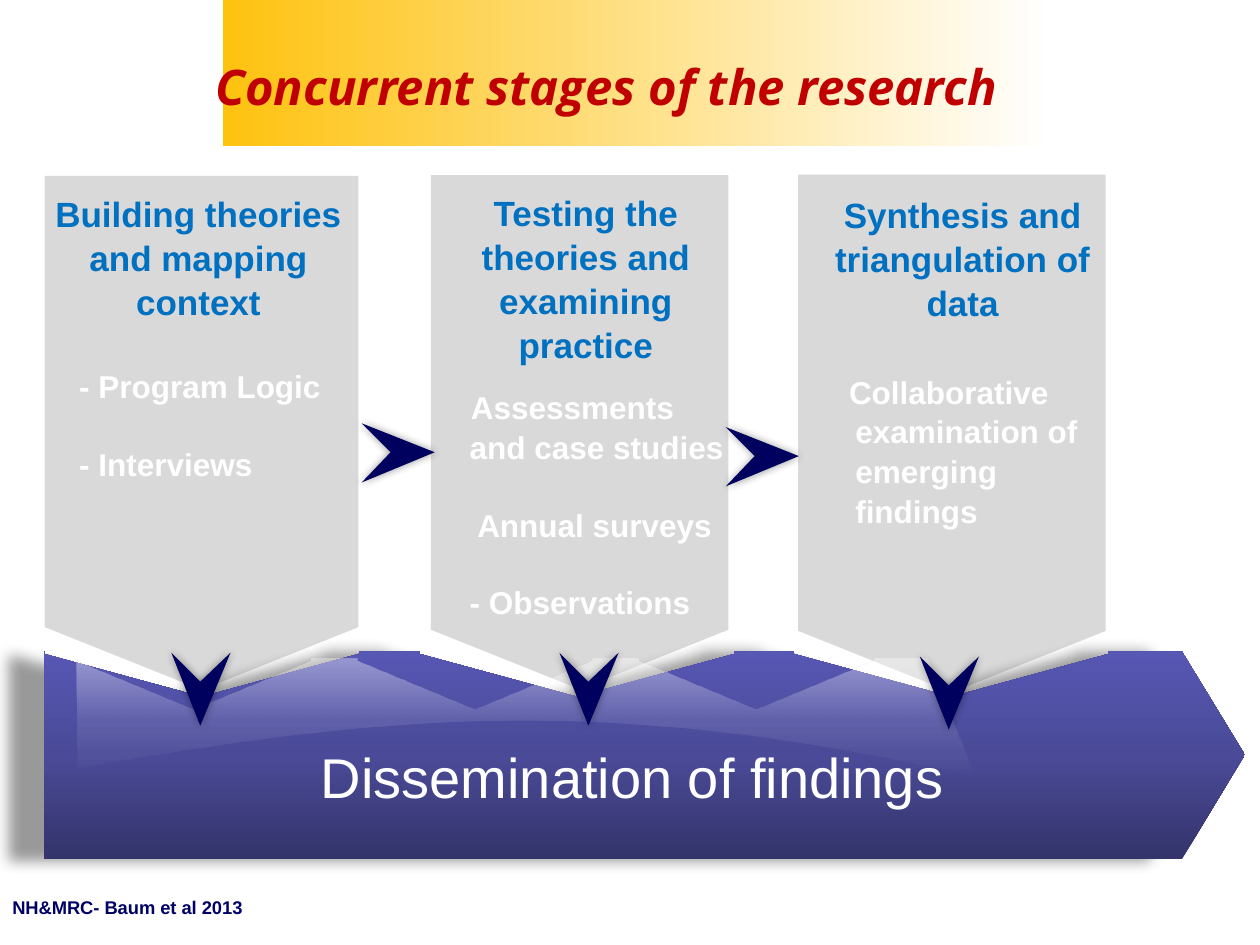
"""Build the slide on the concurrent stages of the research."""
from dataclasses import dataclass

from lxml import etree
from pptx import Presentation
from pptx.dml.color import RGBColor
from pptx.enum.shapes import MSO_SHAPE
from pptx.enum.text import MSO_ANCHOR, MSO_AUTO_SIZE, PP_ALIGN
from pptx.oxml.ns import qn
from pptx.util import Inches, Pt

PENTAGON, RECTANGLE = MSO_SHAPE.PENTAGON, MSO_SHAPE.RECTANGLE
CENTER, LEFT = PP_ALIGN.CENTER, PP_ALIGN.LEFT
MIDDLE, GROW = MSO_ANCHOR.MIDDLE, MSO_AUTO_SIZE.SHAPE_TO_FIT_TEXT

Point = tuple[float, float]
Bounds = tuple[float, float, float, float]


@dataclass(frozen=True)
class TextStyle:
    size: float
    color: str
    bold: bool = True
    italic: bool = False
    font: str = "Arial"
    spacing: float = 1.0


@dataclass(frozen=True)
class Stop:
    position: int
    color: str
    opacity: int = 100


@dataclass(frozen=True)
class Theme:
    stage: str = "D9D9D9"
    arrow: str = "00005E"
    shadow: str = "000000"
    title: TextStyle = TextStyle(28, "C00000", italic=True, font="Open Sans")
    heading: TextStyle = TextStyle(20, "0070C0", spacing=1.05)
    body: TextStyle = TextStyle(18, "FFFFFF", spacing=1.05)
    banner: TextStyle = TextStyle(32, "FFFFFF", bold=False)
    source: TextStyle = TextStyle(10.5, "000066")
    title_band: tuple[Stop, ...] = (Stop(0, "FEC20F"), Stop(100, "FFFFFF"))
    banner_fill: tuple[Stop, ...] = (
        Stop(0, "34346B"), Stop(50, "4A4A98"), Stop(100, "5757B4"))
    gloss: tuple[Stop, ...] = (
        Stop(0, "FFFFFF", 0), Stop(50, "FFFFFF", 11), Stop(100, "FFFFFF", 38))


@dataclass(frozen=True)
class Line:
    text: str
    style: TextStyle
    align: PP_ALIGN = LEFT
    indent: float = 0
    before: float = 0


@dataclass(frozen=True)
class Stage:
    plate: Bounds
    box: Bounds
    lines: tuple[Line, ...]
    arrow: Point


THEME = Theme()
STAGES = (
    Stage((-0.44, 2.19, 4.08, 2.49), (0.33, 1.46, 2.49, 3.8), (
        Line("Building theories and mapping context", THEME.heading, CENTER),
        Line("- Program Logic", THEME.body, indent=0.2, before=24.6),
        Line("- Interviews", THEME.body, indent=0.2, before=21.7),
    ), (1.36, 5.18)),
    Stage((2.56, 2.25, 4.08, 2.36), (3.43, 1.45, 2.44, 4.11), (
        Line("Testing the", THEME.heading, CENTER),
        Line("theories and examining", THEME.heading, CENTER),
        Line("practice", THEME.heading, CENTER),
        Line("Assessments", THEME.body, indent=0.21, before=12),
        Line("and case studies", THEME.body, indent=0.2),
        Line("Annual surveys", THEME.body, indent=0.26, before=21.7),
        Line("- Observations", THEME.body, indent=0.2, before=21.7),
    ), (4.44, 5.18)),
    Stage((5.5, 2.22, 4.11, 2.44), (6.42, 1.47, 2.44, 2.69), (
        Line("Synthesis and triangulation of data", THEME.heading, CENTER),
        Line("Collaborative", THEME.body, indent=0.22, before=26.9),
        Line("examination of", THEME.body, indent=0.27),
        Line("emerging", THEME.body, indent=0.27),
        Line("findings", THEME.body, indent=0.27),
    ), (7.3, 5.21)),
)
RIGHT_ARROWS = ((2.87, 3.36), (5.76, 3.39))
ARROW_OUTLINE = ((0, 0), (0.58, 0.23), (0, 0.47), (0.23, 0.23))


def inches(values: Bounds) -> list:
    """Convert bounds to lengths."""
    return [Inches(value) for value in values]


def set_values(target, values: dict) -> None:
    """Set every named attribute on the target."""
    for name, value in values.items():
        setattr(target, name, value)


def write_lines(frame, lines: tuple[Line, ...]) -> None:
    """Fill a text frame with formatted paragraphs."""
    for index, line in enumerate(lines):
        para = frame.paragraphs[0] if index == 0 else frame.add_paragraph()
        style = line.style
        para._p.get_or_add_pPr().set("marL", str(Inches(line.indent)))
        set_values(para, {"alignment": line.align, "line_spacing": style.spacing,
                          "space_before": Pt(line.before)})
        span = para.add_run()
        span.text = line.text
        set_values(span.font, {"name": style.font, "size": Pt(style.size),
                               "bold": style.bold, "italic": style.italic})
        span.font.color.rgb = RGBColor.from_string(style.color)


def add_text(page, bounds: Bounds, *lines: Line) -> None:
    """Add a wrapping text box."""
    frame = page.shapes.add_textbox(*inches(bounds)).text_frame
    set_values(frame, {"word_wrap": True, "auto_size": GROW})
    write_lines(frame, lines)


def clean(shape) -> None:
    """Remove the outline and the inherited shadow."""
    shape.line.fill.background()
    shape.shadow.inherit = False


def fill_solid(shape, color: str) -> None:
    """Fill a shape with one colour."""
    shape.fill.solid()
    shape.fill.fore_color.rgb = RGBColor.from_string(color)


def add_color(parent, color: str, opacity: int) -> None:
    """Append a colour with its opacity in percent."""
    node = etree.SubElement(parent, qn("a:srgbClr"), val=color)
    etree.SubElement(node, qn("a:alpha"), val=str(opacity * 1000))


def fill_gradient(shape, stops: tuple[Stop, ...], degrees: int) -> None:
    """Fill a shape with a linear gradient, turned clockwise."""
    shape.fill.background()
    properties = shape.element.spPr
    gradient = etree.Element(qn("a:gradFill"), rotWithShape="1")
    stop_list = etree.SubElement(gradient, qn("a:gsLst"))
    for stop in stops:
        node = etree.SubElement(stop_list, qn("a:gs"), pos=str(stop.position * 1000))
        add_color(node, stop.color, stop.opacity)
    etree.SubElement(gradient, qn("a:lin"), ang=str(degrees * 60000), scaled="0")
    properties.replace(properties.find(qn("a:noFill")), gradient)


def add_shadow(shape, blur: float, distance: float = 0) -> None:
    """Give a shape a soft shadow, moved to the left by a distance."""
    effects = shape.element.spPr.find(qn("a:effectLst"))
    shadow = etree.SubElement(
        effects, qn("a:outerShdw"), blurRad=str(Pt(blur)),
        dist=str(Inches(distance)), dir="10800000", rotWithShape="0")
    add_color(shadow, THEME.shadow, 40)


def add_outline(page, points: list[Point]):
    """Add a closed freeform through the points."""
    start, *rest = [(Inches(x), Inches(y)) for x, y in points]
    builder = page.shapes.build_freeform(*start, scale=1.0)
    builder.add_line_segments(rest, close=True)
    shape = builder.convert_to_shape()
    clean(shape)
    return shape


def notches(centers: tuple[float, ...], half: float, top: float, depth: float) -> list[Point]:
    """Return a top edge with a V-shaped notch at each center."""
    return [point for center in centers for point in (
        (center - half, top), (center - half, top + 0.02), (center, top + depth),
        (center + half, top + 0.02), (center + half, top))]


def curve(a: Point, b: Point, c: Point, d: Point, steps: int = 40) -> list[Point]:
    """Sample a cubic curve."""
    def blend(t: float, axis: int) -> float:
        u = 1 - t
        return (u**3 * a[axis] + 3 * u * u * t * b[axis]
                + 3 * u * t * t * c[axis] + t**3 * d[axis])
    return [(blend(i / steps, 0), blend(i / steps, 1)) for i in range(steps + 1)]


def add_arrow(page, origin: Point, down: bool) -> None:
    """Add a notched arrowhead pointing right or down."""
    outline = [(y, x) if down else (x, y) for x, y in ARROW_OUTLINE]
    arrow = add_outline(page, [(origin[0] + x, origin[1] + y) for x, y in outline])
    fill_solid(arrow, THEME.arrow)
    add_shadow(arrow, 5)


def add_title(page) -> None:
    """Place the title over its gradient band."""
    title = page.shapes.title
    set_values(title, dict(zip(("left", "top", "width", "height"),
                               inches((0.61, 0.3, 8.89, 0.77)))))
    title.text_frame.vertical_anchor = MIDDLE
    write_lines(title.text_frame, (
        Line("Concurrent stages of the research", THEME.title, indent=1),))
    band = page.shapes.add_shape(RECTANGLE, *inches((1.77, 0, 6.56, 1.16)))
    clean(band)
    fill_gradient(band, THEME.title_band, 0)
    title.element.addprevious(band.element)


def add_plate(page, bounds: Bounds) -> None:
    """Add a stage plate pointing down."""
    plate = page.shapes.add_shape(PENTAGON, *inches(bounds))
    plate.adjustments[0] = 0.2
    plate.rotation = 90
    clean(plate)
    fill_solid(plate, THEME.stage)


def main() -> None:
    """Build and save the deck."""
    deck = Presentation()
    deck.slide_width, deck.slide_height = Inches(10), Inches(7.5)
    page = deck.slides.add_slide(deck.slide_layouts[5])
    add_title(page)
    for stage in STAGES:
        add_plate(page, stage.plate)
    banner = add_outline(page, notches((1.6, 4.58, 7.55), 1.25, 5.17, 0.36) + [
        (9.38, 5.17), (9.88, 5.99), (9.38, 6.82), (0.35, 6.82)])
    fill_gradient(banner, THEME.banner_fill, 270)
    add_shadow(banner, 8, 0.28)
    for stage in STAGES:
        add_text(page, stage.box, *stage.lines)
    add_text(page, (0.78, 5.84, 8.48, 0.64),
             Line("Dissemination of findings", THEME.banner, CENTER))
    gloss = add_outline(page, notches((1.54, 3.77, 6), 0.93, 5.23, 0.4) + [
        (7.36, 5.23), *curve((7.74, 6.16), (4.74, 5.47), (2.9, 5.7), (0.62, 6.09))])
    fill_gradient(gloss, THEME.gloss, 270)
    for stage in STAGES:
        add_arrow(page, stage.arrow, down=True)
    for origin in RIGHT_ARROWS:
        add_arrow(page, origin, down=False)
    add_text(page, (0, 7.06, 3.07, 0.28), Line("NH&MRC- Baum et al 2013", THEME.source))
    deck.save("out.pptx")


if __name__ == "__main__":
    main()
